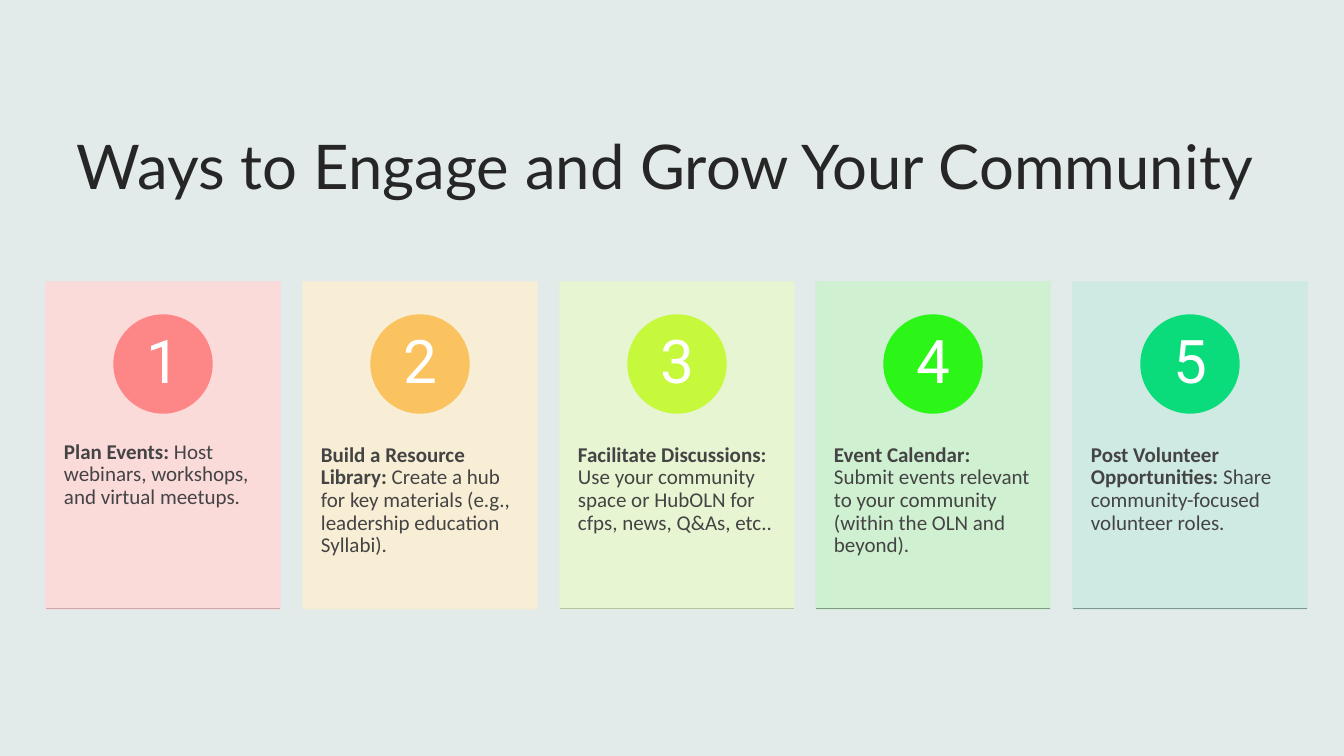
import pptx
import pptx.util
import pptx.dml.color
import pptx.enum.shapes
import pptx.enum.text
import pptx.oxml.ns
import lxml.etree

PX = 12192000 / 1344
KIND = pptx.enum.shapes.MSO_SHAPE
LINE = pptx.enum.shapes.MSO_CONNECTOR
ALIGN = pptx.enum.text.PP_ALIGN
ANCHOR = pptx.enum.text.MSO_ANCHOR
HUES = {"back": "E2EAEA", "title": "262626", "body": "444444", "digit": "FFFFFF"}
CARDS = [
    {"card": "FED9D9", "disc": "FD8686", "rule": "C9A9A9", "head": "Plan Events:",
     "body": " Host webinars, workshops, and virtual meetups."},
    {"card": "FBEFD4", "disc": "FBC360", "rule": "F3EAD6", "head": "Build a Resource Library:",
     "body": " Create a hub for key materials (e.g., leadership education Syllabi)."},
    {"card": "E8F7D0", "disc": "C6F93B", "rule": "B5C0A5", "head": "Facilitate Discussions:",
     "body": " Use your community space or HubOLN for cfps, news, Q&As, etc.."},
    {"card": "CDF1CF", "disc": "2CF617", "rule": "809982", "head": "Event Calendar:",
     "body": " Submit events relevant to your community (within the OLN and beyond)."},
    {"card": "CCEBE3", "disc": "0ADC7B", "rule": "80958F", "head": "Post Volunteer Opportunities:",
     "body": " Share community-focused volunteer roles."},
]


def draw(kind, box, hue, alpha=100):
    """Add a preset shape whose fill and line share one colour."""
    shape = slide.shapes.add_shape(kind, *[round(n * PX) for n in box])
    shape.shadow.inherit = False
    shape.line.width = pptx.util.Pt(1)
    for fill in (shape.fill, shape.line.fill):
        fill.solid()
        fill.fore_color.rgb = pptx.dml.color.RGBColor.from_string(hue)
    if alpha < 100:
        for node in shape.element.spPr.iter(pptx.oxml.ns.qn("a:srgbClr")):
            lxml.etree.SubElement(node, pptx.oxml.ns.qn("a:alpha"), val=str(alpha * 1000))
    return shape


def write(shape, runs, font, size, hue, pad, anchor, align):
    """Fill a shape with one paragraph of (text, bold) runs; pad is (sides, ends)."""
    frame = shape.text_frame
    side, end = [round(n * PX) for n in pad]
    look = {"word_wrap": True, "vertical_anchor": anchor, "margin_left": side,
            "margin_right": side, "margin_top": end, "margin_bottom": end}
    for name, value in look.items():
        setattr(frame, name, value)
    para = frame.paragraphs[0]
    para.alignment = align
    para.line_spacing = 0.9
    for text, bold in runs:
        run = para.add_run()
        run.text = text
        for name, value in {"name": font, "size": pptx.util.Pt(size), "bold": bold}.items():
            setattr(run.font, name, value)
        run.font.color.rgb = pptx.dml.color.RGBColor.from_string(HUES[hue])


deck = pptx.Presentation()
deck.slide_width, deck.slide_height = round(1344 * PX), round(756 * PX)
slide = deck.slides.add_slide(deck.slide_layouts[5])
slide.background.fill.solid()
slide.background.fill.fore_color.rgb = pptx.dml.color.RGBColor.from_string(HUES["back"])

title = slide.shapes.title
for name, value in {"left": 67, "top": 61, "width": 1210, "height": 147}.items():
    setattr(title, name, round(value * PX))
write(title, [("Ways to Engage and Grow Your Community", False)], "Lato", 44, "title",
      (10, 5), ANCHOR.BOTTOM, ALIGN.LEFT)

for i, card in enumerate(CARDS):
    left = 46 + (i * 1027 + 2) // 4
    draw(KIND.RECTANGLE, (left, 282, 234, 327), card["card"], 90)
    note = slide.shapes.add_textbox(*[round(n * PX) for n in (left, 407, 234, 196)])
    write(note, [(card["head"], True), (card["body"], False)], "Calibri", 15, "body",
          (18, 37), ANCHOR.TOP, ALIGN.LEFT)
    disc = draw(KIND.OVAL, (left + 68, 315, 98, 98), card["disc"])
    write(disc, [(str(i + 1), False)], "Roboto", 43, "digit", (8, 1), ANCHOR.MIDDLE, ALIGN.CENTER)
    rule = slide.shapes.add_connector(
        LINE.STRAIGHT, *[round(n * PX) for n in (left, 609, left + 234, 609)])
    rule.line.width = pptx.util.Pt(0.75)
    rule.line.color.rgb = pptx.dml.color.RGBColor.from_string(card["rule"])
    lxml.etree.SubElement(rule.element.spPr, pptx.oxml.ns.qn("a:effectLst"))

deck.save("out.pptx")
